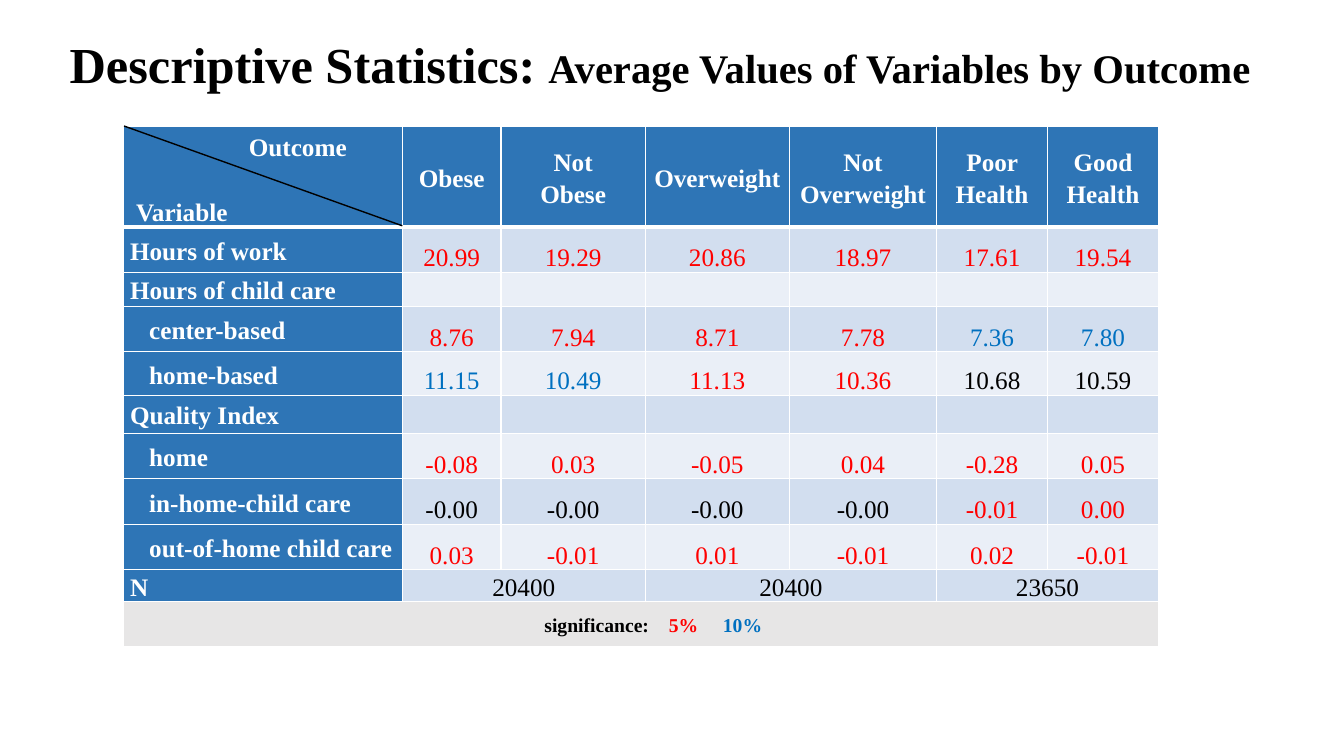
import pptx
import pptx.util
import pptx.dml.color
import pptx.enum.shapes
import pptx.enum.text
import pptx.oxml.ns
import lxml.etree

ALIGN = pptx.enum.text.PP_ALIGN
ANCHOR = pptx.enum.text.MSO_ANCHOR
NO_FIT = pptx.enum.text.MSO_AUTO_SIZE.NONE
WHITE, BLACK, RED, BLUE = "FFFFFF", "000000", "FF0000", "0070C0"
HEADER_FILL, FOOTER_FILL = "2E75B6", "E7E6E6"
BAND_FILLS = ["EAEFF7", "D2DEEF"]
COLORS = {"r": RED, "b": BLUE, "k": BLACK}

COLUMN_WIDTHS = [277, 98, 143, 143, 146, 110, 110]
ROW_HEIGHTS = [100, 45, 34, 45, 43, 38, 45, 45, 45, 31, 45]
OUTCOMES = ["Obese", "Not\nObese", "Overweight", "Not Overweight", "Poor Health", "Good Health"]
VARIABLES = [
    ("Hours of work", 0, "20.99 19.29 20.86 18.97 17.61 19.54", "rrrrrr"),
    ("Hours of child care", 0, "", ""),
    ("center-based", 19, "8.76 7.94 8.71 7.78 7.36 7.80", "rrrrbb"),
    ("home-based", 19, "11.15 10.49 11.13 10.36 10.68 10.59", "bbrrkk"),
    ("Quality Index", 0, "", ""),
    ("home", 19, "-0.08 0.03 -0.05 0.04 -0.28 0.05", "rrrrrr"),
    ("in-home-child care", 19, "-0.00 -0.00 -0.00 -0.00 -0.01 0.00", "kkkkrr"),
    ("out-of-home child care", 19, "0.03 -0.01 0.01 -0.01 0.02 -0.01", "rrrrrr"),
]
SAMPLE_SIZES = ["20400", "20400", "23650"]


def px(length):
    return pptx.util.Emu(length * 9144)


def rgb(color):
    return pptx.dml.color.RGBColor.from_string(color)


class SlideBuilder:
    font = "Times New Roman"
    size = 18

    def __init__(self, deck):
        self.slide = deck.slides.add_slide(deck.slide_layouts[5])

    def run(self, para, text, color, bold=True, size=None, spacing=0):
        span = para.add_run()
        span.text = text
        span.font.name = self.font
        span.font.size = pptx.util.Pt(size or self.size)
        span.font.bold = bold
        span.font.color.rgb = rgb(color)
        if spacing:
            span.font._element.set("spc", str(spacing))

    def title(self, left, top, width, height, runs):
        box = self.slide.shapes.title
        box.left, box.top, box.width, box.height = map(px, (left, top, width, height))
        frame = box.text_frame
        frame.auto_size = NO_FIT
        frame.vertical_anchor = ANCHOR.MIDDLE
        para = frame.paragraphs[0]
        para.alignment = ALIGN.LEFT
        para.line_spacing = 0.9
        for text, size in runs:
            self.run(para, text, BLACK, size=size)

    def label(self, left, top, width, height, text, color):
        box = self.slide.shapes.add_textbox(*map(px, (left, top, width, height)))
        box.text_frame.word_wrap = True
        self.run(box.text_frame.paragraphs[0], text, color)

    def line(self, x1, y1, x2, y2, color):
        straight = pptx.enum.shapes.MSO_CONNECTOR.STRAIGHT
        connector = self.slide.shapes.add_connector(straight, *map(px, (x1, y1, x2, y2)))
        connector.line.color.rgb = rgb(color)
        connector.line.width = pptx.util.Pt(1)
        properties = connector._element.spPr
        lxml.etree.SubElement(properties, pptx.oxml.ns.qn("a:effectLst"))

    def table(self, left, top, widths, heights):
        frame = self.slide.shapes.add_table(
            len(heights), len(widths), px(left), px(top), px(sum(widths)), px(sum(heights)))
        table = frame.table
        table.first_row = table.horz_banding = False
        for column, width in zip(table.columns, widths):
            column.width = px(width)
        for row, height in zip(table.rows, heights):
            row.height = px(height)
        return table

    def border(self, cell, side, points):
        properties = cell._tc.get_or_add_tcPr()
        edge = lxml.etree.SubElement(properties, pptx.oxml.ns.qn("a:ln" + side))
        edge.set("w", str(pptx.util.Pt(points)))
        fill = lxml.etree.SubElement(edge, pptx.oxml.ns.qn("a:solidFill"))
        lxml.etree.SubElement(fill, pptx.oxml.ns.qn("a:srgbClr")).set("val", WHITE)

    def style_cell(self, cell, fill, top=1, bottom=1):
        for side, points in (("L", 1), ("R", 1), ("T", top), ("B", bottom)):
            self.border(cell, side, points)
        cell.fill.solid()
        cell.fill.fore_color.rgb = rgb(fill)
        cell.margin_left = cell.margin_right = px(7)
        cell.margin_top = cell.margin_bottom = 0
        cell.text_frame.paragraphs[0].font.size = pptx.util.Pt(self.size)

    def write_cell(self, cell, text, color, bold=True, align=ALIGN.CENTER,
                   anchor=ANCHOR.MIDDLE, indent=0, spacing=1.15):
        cell.vertical_anchor = anchor
        frame = cell.text_frame
        for index, line in enumerate(text.split("\n")):
            para = frame.add_paragraph() if index else frame.paragraphs[0]
            para.alignment = align
            para.line_spacing = spacing
            para._p.get_or_add_pPr().set("marL", str(px(indent)))
            if line:
                self.run(para, line, color, bold)


def fill_table(page, table):
    last = len(ROW_HEIGHTS) - 1
    for row in range(last + 1):
        for column in range(len(COLUMN_WIDTHS)):
            if row == last:
                fill = FOOTER_FILL
            elif row == 0 or column == 0:
                fill = HEADER_FILL
            else:
                fill = BAND_FILLS[row % 2]
            page.style_cell(table.cell(row, column), fill,
                            3 if row == 1 else 1, 3 if row == 0 else 1)

    page.write_cell(table.cell(0, 0), "Variable", WHITE, align=ALIGN.LEFT,
                    anchor=ANCHOR.BOTTOM, indent=6, spacing=1.07)
    for column, outcome in enumerate(OUTCOMES, 1):
        page.write_cell(table.cell(0, column), outcome, WHITE)

    for row, (name, indent, values, marks) in enumerate(VARIABLES, 1):
        page.write_cell(table.cell(row, 0), name, WHITE, align=ALIGN.LEFT, indent=indent)
        for column, (value, mark) in enumerate(zip(values.split(), marks), 1):
            page.write_cell(table.cell(row, column), value, COLORS[mark], False,
                            anchor=ANCHOR.BOTTOM)

    page.write_cell(table.cell(last - 1, 0), "N", WHITE, align=ALIGN.LEFT)
    for index, count in enumerate(SAMPLE_SIZES):
        column = 1 + 2 * index
        cell = table.cell(last - 1, column)
        cell.merge(table.cell(last - 1, column + 1))
        page.write_cell(cell, count, BLACK, False, anchor=ANCHOR.BOTTOM)

    legend = table.cell(last, 0)
    legend.merge(table.cell(last, len(COLUMN_WIDTHS) - 1))
    page.write_cell(legend, "", BLACK, indent=25)
    para = legend.text_frame.paragraphs[0]
    page.run(para, "significance:", BLACK, size=14)
    page.run(para, " ", RED, size=14, spacing=1050)
    page.run(para, "5%", RED, size=14)
    page.run(para, " ", RED, size=14, spacing=1400)
    page.run(para, "10%", BLUE, size=14)


def main():
    deck = pptx.Presentation()
    deck.slide_width, deck.slide_height = px(1333), px(750)
    page = SlideBuilder(deck)
    table = page.table(122, 125, COLUMN_WIDTHS, ROW_HEIGHTS)
    fill_table(page, table)
    page.title(59, 31, 1240, 71, [
        ("Descriptive Statistics: ", 36),
        ("Average Values of Variables by Outcome", 29),
    ])
    page.line(123, 125, 399, 224, BLACK)
    page.label(237, 125, 151, 40, "Outcome", WHITE)
    deck.save("out.pptx")


if __name__ == "__main__":
    main()
